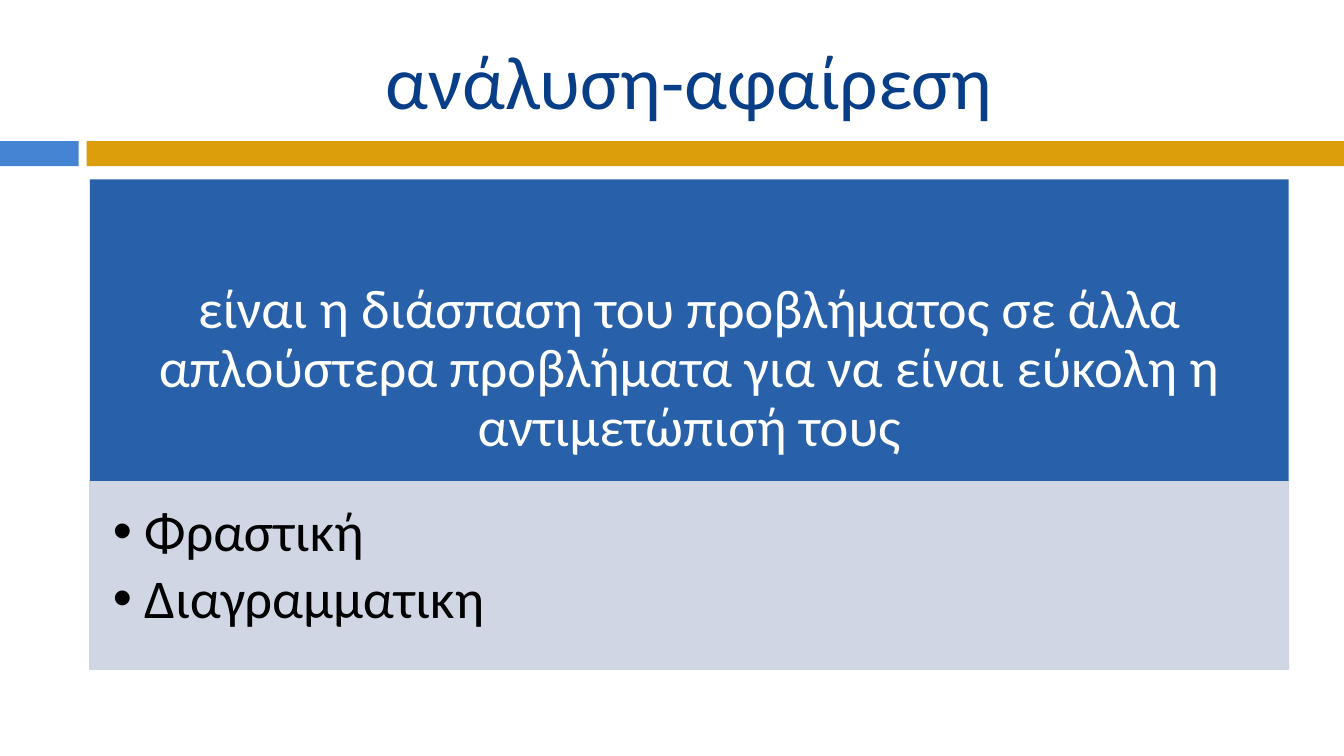
from lxml.etree import SubElement
from pptx import Presentation
from pptx.dml.color import RGBColor
from pptx.enum.shapes import MSO_SHAPE
from pptx.enum.text import MSO_ANCHOR, MSO_AUTO_SIZE, PP_ALIGN
from pptx.oxml.ns import qn
from pptx.util import Inches, Pt

NAVY = RGBColor(0x07, 0x3E, 0x87)
SKY = RGBColor(0x45, 0x84, 0xD3)
AMBER = RGBColor(0xDC, 0x9F, 0x0B)
BLUE = RGBColor(0x28, 0x61, 0xA9)
MIST = RGBColor(0xCD, 0xD2, 0xE2)
WHITE = RGBColor(0xFF, 0xFF, 0xFF)
BLACK = RGBColor(0, 0, 0)


def write(shape, *lines, size, color, align=PP_ALIGN.CENTER, anchor=MSO_ANCHOR.MIDDLE,
          insets=(0.1, 0.05, 0.1, 0.05), spacing=0.9, after=0, hang=0):
    """Fill a shape with one paragraph per line in the given format."""
    frame = shape.text_frame
    frame.word_wrap = True
    frame.auto_size = MSO_AUTO_SIZE.NONE
    frame.vertical_anchor = anchor
    frame.margin_left, frame.margin_top, frame.margin_right, frame.margin_bottom = map(Inches, insets)
    frame.text = "\n".join(lines)
    for paragraph in frame.paragraphs:
        paragraph.alignment = align
        paragraph.line_spacing = spacing
        paragraph.space_before = Pt(0)
        paragraph.space_after = Pt(after)
        font = paragraph.runs[0].font
        font.name, font.size, font.color.rgb = "Calibri", Pt(size), color
        if hang:
            properties = paragraph._p.get_or_add_pPr()
            properties.set("marL", str(Inches(hang)))
            properties.set("indent", str(Inches(-hang)))


class AnalysisSlide:
    """Style and current slide, laid out on a grid of 100 columns and 100 rows."""

    LEFT, WIDTH = 6.68, 89.2
    TITLE_SIZE, TEXT_SIZE = 54, 39

    def __init__(self, deck):
        """Add a title and content slide to the deck."""
        self.column = deck.slide_width / 100
        self.row = deck.slide_height / 100
        self.slide = deck.slides.add_slide(deck.slide_layouts[1])

    def box(self, left, top, width, height):
        """Turn grid columns and rows into slide lengths."""
        return (round(left * self.column), round(top * self.row),
                round(width * self.column), round(height * self.row))

    def place(self, placeholder, top, height):
        """Move a placeholder into the content columns."""
        (placeholder.left, placeholder.top,
         placeholder.width, placeholder.height) = self.box(self.LEFT, top, self.WIDTH, height)
        return placeholder

    def block(self, left, top, width, height, color):
        """Draw a plain rectangle without outline."""
        rectangle = self.slide.shapes.add_shape(MSO_SHAPE.RECTANGLE, *self.box(left, top, width, height))
        rectangle.shadow.inherit = False
        rectangle.fill.solid()
        rectangle.fill.fore_color.rgb = color
        rectangle.line.fill.background()
        return rectangle

    def title(self, text, top, height):
        """Set the slide title."""
        write(self.place(self.slide.shapes.title, top, height), text,
              size=self.TITLE_SIZE, color=NAVY, spacing=1)

    def definition(self, text, top, height):
        """Draw the coloured panel with the definition in its lower part."""
        panel = self.block(self.LEFT, top, self.WIDTH, height, BLUE)
        write(panel, text, size=self.TEXT_SIZE, color=WHITE, insets=(0.3, 0.95, 0.3, 0.17))

    def kinds(self, items, top, height):
        """Set the bulleted list on its translucent panel."""
        panel = self.place(self.slide.placeholders[1], top, height)
        panel.line.width = Pt(0.8)
        for paint in (panel.fill, panel.line.fill):
            paint.solid()
            paint.fore_color.rgb = MIST
        for tint in panel._element.spPr.iter(qn("a:srgbClr")):
            SubElement(tint, qn("a:alpha"), val="90000")
        write(panel, *items, size=self.TEXT_SIZE, color=BLACK, align=PP_ALIGN.LEFT,
              anchor=MSO_ANCHOR.TOP, insets=(0.23, 0.23, 0.3, 0.34), after=5.85, hang=0.31)


def main():
    """Build and save the slide."""
    deck = Presentation()
    deck.slide_width, deck.slide_height = Inches(13.33), Inches(7.5)
    analysis = AnalysisSlide(deck)
    analysis.block(0, 18.67, 5.85, 3.33, SKY)
    analysis.block(6.45, 18.67, 93.55, 3.33, AMBER)
    analysis.title("ανάλυση-αφαίρεση", 3.33, 14.4)
    analysis.definition("είναι η διάσπαση του προβλήματος σε άλλα απλούστερα προβλήματα "
                        "για να είναι εύκολη η αντιμετώπισή τους", 23.73, 39.87)
    analysis.kinds(["Φραστική", "Διαγραμματικη"], 63.6, 24.93)
    deck.save("out.pptx")


if __name__ == "__main__":
    main()
